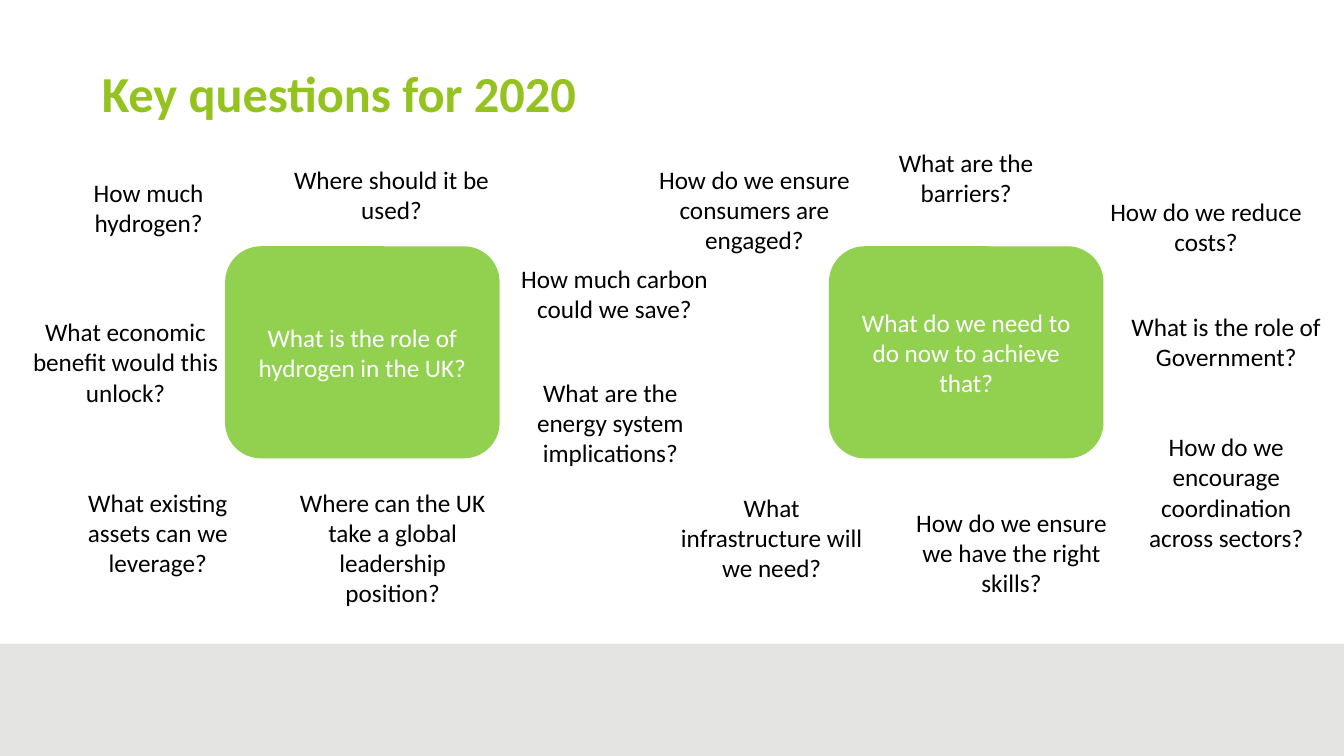
from dataclasses import dataclass

from pptx import Presentation
from pptx.dml.color import RGBColor
from pptx.enum.shapes import MSO_SHAPE as Shape
from pptx.enum.text import MSO_ANCHOR as Anchor, MSO_AUTO_SIZE as AutoSize, PP_ALIGN as Align
from pptx.util import Pt


@dataclass(frozen=True)
class Theme:
    font: str = "Calibri"
    title_size: int = 36
    body_size: int = 18
    title: str = "94C21F"
    topic: str = "92D050"
    band: str = "E4E5E3"
    dark: str = "000000"
    light: str = "FFFFFF"


SLIDE_WIDTH, SLIDE_HEIGHT = 960, 540
BAND_TOP = 460
TOPIC_TOP, TOPIC_WIDTH, TOPIC_HEIGHT = 176.4, 195.1, 150.5
QUESTION_WIDTH, LINE_HEIGHT, QUESTION_PADDING = 153.4, 21.6, 7.9

TOPICS = [
    (161.3, "What is the role of hydrogen in the UK?"),
    (592.6, "What do we need to do now to achieve that?"),
]
QUESTIONS = [
    (29.5, 123.1, 2, "How much hydrogen?"),
    (203, 113.8, 2, "Where should it be used?"),
    (362.2, 184.3, 2, "How much carbon could we save?"),
    (359.3, 265.7, 3, "What are the energy system implications?"),
    (203.8, 344.2, 4, "Where can the UK take a global leadership position?"),
    (36, 344.2, 3, "What existing assets can we leverage?"),
    (13, 222.5, 3, "What economic benefit would this unlock?"),
    (613.4, 101.5, 2, "What are the barriers?"),
    (784.8, 136.8, 2, "How do we reduce costs?"),
    (799.2, 218.9, 2, "What is the role of Government?"),
    (645.8, 358.6, 3, "How do we ensure we have the right skills?"),
    (474.5, 347.8, 3, "What infrastructure will we need?"),
    (462.2, 113.8, 3, "How do we ensure consumers are engaged?"),
    (799.2, 304.6, 4, "How do we encourage coordination across sectors?"),
]


class SlideBuilder:
    def __init__(self, slide, theme):
        self.slide = slide
        self.theme = theme

    def set_text(self, shape, text, size, color, align, bold=False):
        frame = shape.text_frame
        frame.word_wrap = True
        frame.text = text
        paragraph = frame.paragraphs[0]
        paragraph.alignment = align
        paragraph.font.name = self.theme.font
        paragraph.font.size = Pt(size)
        paragraph.font.bold = bold
        paragraph.font.color.rgb = RGBColor.from_string(color)
        return frame

    def block(self, kind, left, top, width, height, color):
        shape = self.slide.shapes.add_shape(kind, Pt(left), Pt(top), Pt(width), Pt(height))
        shape.shadow.inherit = False
        shape.fill.solid()
        shape.fill.fore_color.rgb = RGBColor.from_string(color)
        shape.line.color.rgb = RGBColor.from_string(color)
        shape.line.width = Pt(1)
        return shape

    def band(self):
        shape = self.block(Shape.RECTANGLE, 0, BAND_TOP, SLIDE_WIDTH,
                           SLIDE_HEIGHT - BAND_TOP, self.theme.band)
        shape.line.fill.background()

    def title(self, text):
        title = self.slide.shapes.title
        title.left, title.top, title.width, title.height = Pt(65.5), Pt(34.6), Pt(828), Pt(67.7)
        frame = self.set_text(title, text, self.theme.title_size, self.theme.title, Align.LEFT, True)
        frame.vertical_anchor = Anchor.MIDDLE
        frame.paragraphs[0].line_spacing = 0.9

    def topic(self, left, text):
        shape = self.block(Shape.ROUNDED_RECTANGLE, left, TOPIC_TOP, TOPIC_WIDTH,
                           TOPIC_HEIGHT, self.theme.topic)
        frame = self.set_text(shape, text, self.theme.body_size, self.theme.light, Align.CENTER)
        frame.vertical_anchor = Anchor.MIDDLE

    def question(self, left, top, lines, text):
        height = lines * LINE_HEIGHT + QUESTION_PADDING
        shape = self.slide.shapes.add_textbox(Pt(left), Pt(top), Pt(QUESTION_WIDTH), Pt(height))
        frame = self.set_text(shape, text, self.theme.body_size, self.theme.dark, Align.CENTER)
        frame.auto_size = AutoSize.SHAPE_TO_FIT_TEXT


def main():
    presentation = Presentation()
    presentation.slide_width, presentation.slide_height = Pt(SLIDE_WIDTH), Pt(SLIDE_HEIGHT)
    slide = presentation.slides.add_slide(presentation.slide_layouts.get_by_name("Title Only"))
    builder = SlideBuilder(slide, Theme())
    builder.band()
    builder.title("Key questions for 2020")
    for topic in TOPICS:
        builder.topic(*topic)
    for question in QUESTIONS:
        builder.question(*question)
    presentation.save("out.pptx")


if __name__ == "__main__":
    main()
